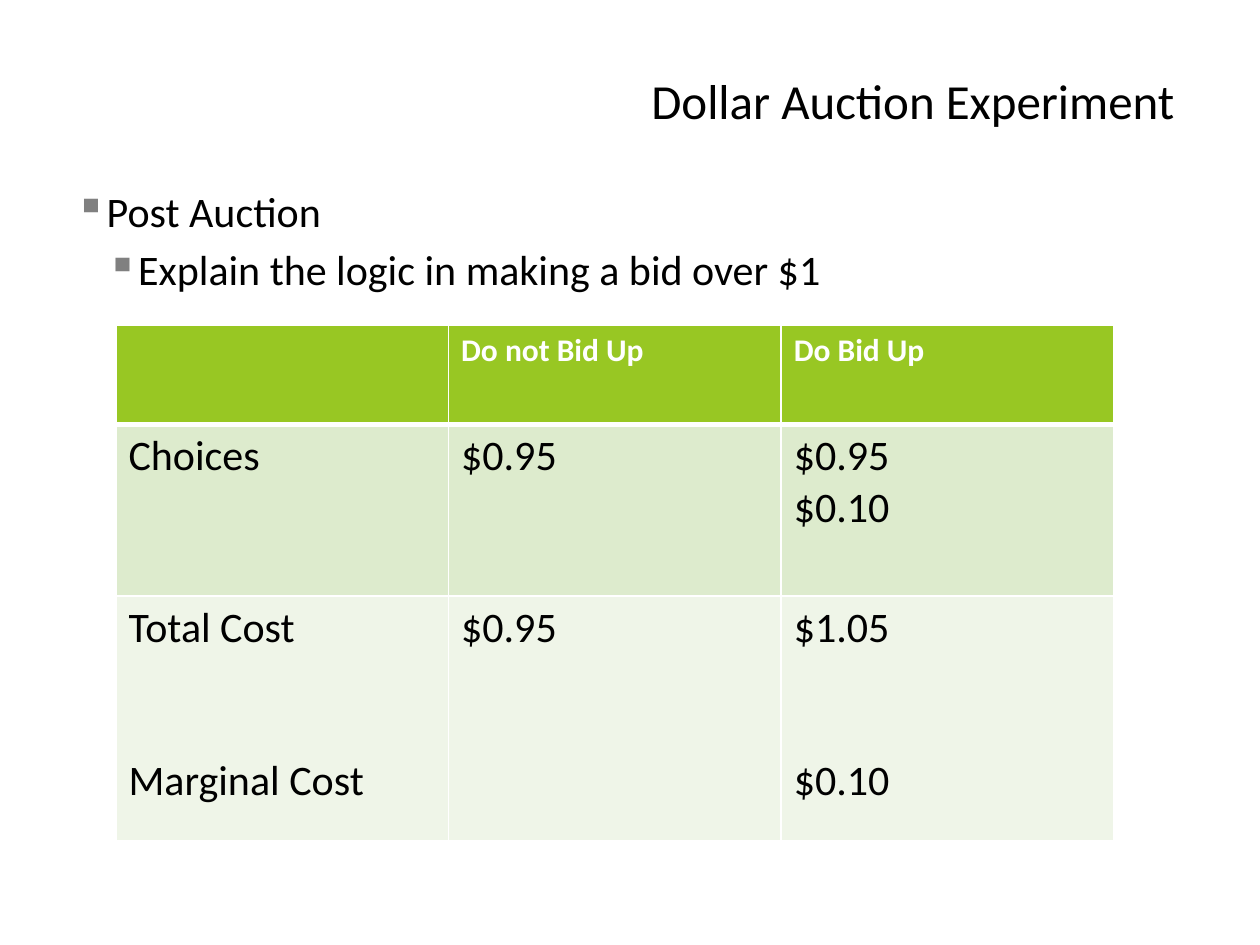
import pptx
import pptx.dml.color
import pptx.enum.text
import pptx.oxml
import pptx.oxml.ns
import pptx.util

Inches, Pt = pptx.util.Inches, pptx.util.Pt
RGB = pptx.dml.color.RGBColor

# Content
TITLE = "Dollar Auction Experiment"
POINTS = ["Post Auction", "Explain the logic in making a bid over $1"]
ROWS = [
    ["", "Do not Bid Up", "Do Bid Up"],
    ["Choices", "$0.95", "$0.95\n$0.10"],
    ["Total Cost\nMarginal Cost", "$0.95", "$1.05\n$0.10"],
]

# Style
FONT = "Calibri"
BLACK = RGB(0x00, 0x00, 0x00)
WHITE = RGB(0xFF, 0xFF, 0xFF)
GRAY = RGB(0x80, 0x80, 0x80)
FILLS = [RGB(0x98, 0xC7, 0x23), RGB(0xDD, 0xEB, 0xCD), RGB(0xEF, 0xF5, 0xE8)]
HEIGHTS = [0.79, 1.36, 1.94]
GAPS = [0, 0, 58.6]  # space between the lines in a cell, by row
WIDTH = 2.64


def style(para, size, color=BLACK, bold=False):
    for run in para.runs:
        run.font.name = FONT
        run.font.size = Pt(size)
        run.font.bold = bold
        run.font.color.rgb = color


def add_xml(parent, text, spot):
    ns = pptx.oxml.ns.nsdecls("a")
    head, rest = text.split(">", 1)
    parent.insert(spot, pptx.oxml.parse_xml(f"{head} {ns}>{rest}"))


def add_bullet(para, level):
    props = para._p.get_or_add_pPr()
    props.set("marL", str(Inches(0.2 + 0.25 * level)))
    props.set("indent", str(Inches(-0.2)))
    add_xml(props, f'<a:buClr><a:srgbClr val="{GRAY}"/></a:buClr>', len(props))
    add_xml(props, '<a:buChar char="▪"></a:buChar>', len(props))


def add_edges(cell, row):
    props = cell._tc.get_or_add_tcPr()
    wide = {"T": 3 if row == 1 else 1, "B": 3 if row == 0 else 1}
    for spot, side in enumerate("LRTB"):
        width = Pt(wide.get(side, 1))
        add_xml(props, f'<a:ln{side} w="{width}"><a:solidFill>'
                f'<a:srgbClr val="{WHITE}"/></a:solidFill></a:ln{side}>', spot)


deck = pptx.Presentation()
deck.slide_width, deck.slide_height = Inches(10), Inches(7.5)
slide = deck.slides.add_slide(deck.slide_layouts[5])

# Title
title = slide.shapes.title
title.left, title.top = Inches(0.42), Inches(0.33)
title.width, title.height = Inches(9), Inches(0.92)
title.text_frame.text = TITLE
title.text_frame.vertical_anchor = pptx.enum.text.MSO_ANCHOR.MIDDLE
head = title.text_frame.paragraphs[0]
head.alignment = pptx.enum.text.PP_ALIGN.RIGHT
style(head, 28)

# Bullets
box = slide.shapes.add_textbox(Inches(0.5), Inches(1.42), Inches(8.67), Inches(5.33))
box.text_frame.word_wrap = True
box.text_frame.text = "\n".join(POINTS)
for level, para in enumerate(box.text_frame.paragraphs):
    para.level = level
    add_bullet(para, level)
    if level:
        para.space_before = Pt(4.8)
    style(para, 24)

# Table
count = len(ROWS[0])
table = slide.shapes.add_table(
    len(ROWS), count, Inches(0.92), Inches(2.58),
    Inches(WIDTH * count), Inches(sum(HEIGHTS))).table
for col in table.columns:
    col.width = Inches(WIDTH)
for r, row in enumerate(ROWS):
    table.rows[r].height = Inches(HEIGHTS[r])
    for c, text in enumerate(row):
        cell = table.cell(r, c)
        cell.fill.solid()
        cell.fill.fore_color.rgb = FILLS[r]
        add_edges(cell, r)
        cell.text_frame.text = text
        for n, para in enumerate(cell.text_frame.paragraphs):
            if n:
                para.space_before = Pt(GAPS[r])
            if r == 0:
                style(para, 18, WHITE, True)
            else:
                style(para, 24)

deck.save("out.pptx")
